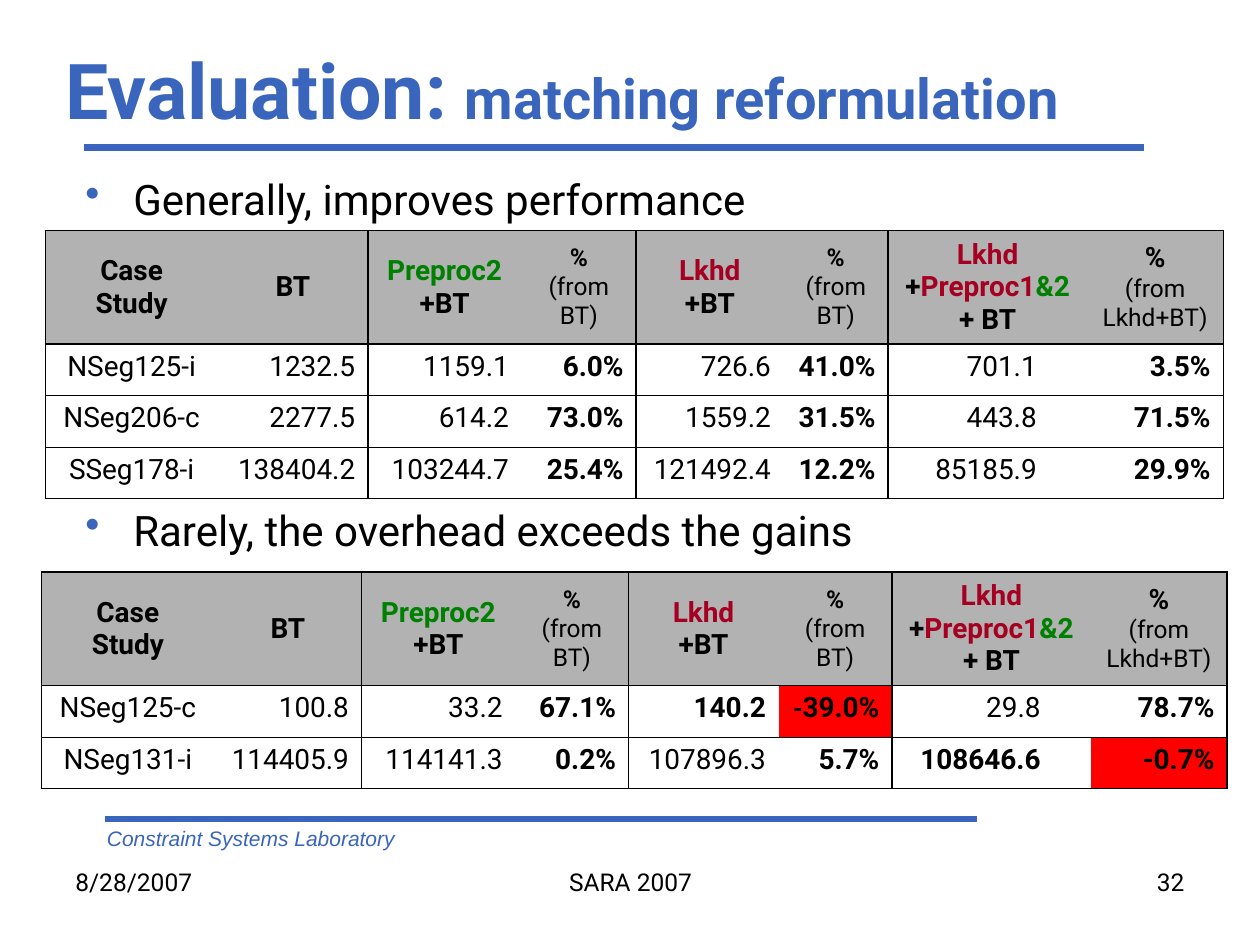
import pptx
import pptx.dml.color
import pptx.enum.text
import pptx.enum.shapes
import pptx.oxml.ns
import pptx.util
from lxml import etree

Inches = pptx.util.Inches
Pt = pptx.util.Pt
ALIGN = pptx.enum.text.PP_ALIGN
ANCHOR = pptx.enum.text.MSO_ANCHOR
qn = pptx.oxml.ns.qn

BLUE, BLACK, GREEN, CRIMSON = "3A65BC", "000000", "008000", "A50021"
GRAY, RED = "B2B2B2", "FF0000"

# Header cells: a list of lines, each a list of (text, format) spans
FROM_BT = [[("%", {"size": 14})], [("(from BT)", {"size": 14, "bold": False})]]
HEADER = [
    [[("Case", {})], [("Study", {})]],
    [[("BT", {})]],
    [[("Preproc2", {"color": GREEN})], [("+BT", {})]],
    FROM_BT,
    [[("Lkhd", {"color": CRIMSON})], [("+BT", {})]],
    FROM_BT,
    [[("Lkhd", {"color": CRIMSON})],
     [("+", {}), ("Preproc1", {"color": CRIMSON}), ("&2", {"color": GREEN})],
     [("+ BT", {})]],
    [[("%", {})], [("(from Lkhd+BT)", {"size": 14, "bold": False})]],
]
IMPROVED = [
    ["NSeg125-i", "1232.5", "1159.1", "6.0%", "726.6", "41.0%", "701.1", "3.5%"],
    ["NSeg206-c", "2277.5", "614.2", "73.0%", "1559.2", "31.5%", "443.8", "71.5%"],
    ["SSeg178-i", "138404.2", "103244.7", "25.4%", "121492.4", "12.2%", "85185.9", "29.9%"],
]
WORSENED = [
    ["NSeg125-c", "100.8", "33.2", "67.1%", "140.2", "-39.0%", "29.8", "78.7%"],
    ["NSeg131-i", "114405.9", "114141.3", "0.2%", "107896.3", "5.7%", "108646.6", "-0.7%"],
]
SLOWER_TIMES = {"140.2", "108646.6"}
GROUP_STARTS = {0, 2, 4, 6}
PADDED_COLUMN = 6


def rgb(color):
    return pptx.dml.color.RGBColor.from_string(color)


def add_span(para, text, size=16, color=BLACK, bold=False, italic=False, font="Roboto"):
    span = para.add_run()
    span.text = text
    span.font.name = font
    span.font.size = Pt(size)
    span.font.bold = bold
    span.font.italic = italic
    span.font.color.rgb = rgb(color)


def add_box(page, left, top, width, height, spans, align=ALIGN.LEFT, anchor=ANCHOR.TOP):
    box = page.shapes.add_textbox(Inches(left), Inches(top), Inches(width), Inches(height))
    box.text_frame.word_wrap = True
    box.text_frame.vertical_anchor = anchor
    para = box.text_frame.paragraphs[0]
    para.alignment = align
    for text, style in spans:
        add_span(para, text, **style)
    return box


def add_rule(page, left, right, top):
    rule = page.shapes.add_connector(
        pptx.enum.shapes.MSO_CONNECTOR.STRAIGHT,
        Inches(left), Inches(top), Inches(right), Inches(top))
    rule.line.color.rgb = rgb(BLUE)
    rule.line.width = Pt(4)
    etree.SubElement(rule.element.spPr, qn("a:effectLst"))


def add_bullet(para, text):
    properties = para._p.get_or_add_pPr()
    properties.set("marL", str(Inches(0.38)))
    properties.set("indent", str(-Inches(0.38)))
    bullet_color = etree.SubElement(properties, qn("a:buClr"))
    etree.SubElement(bullet_color, qn("a:srgbClr"), val=BLUE)
    etree.SubElement(properties, qn("a:buChar"), char="•")
    add_span(para, text, size=24)


def set_border(cell, side, width):
    """Draw one black cell edge, or hide it when width is 0."""
    line = etree.SubElement(cell._tc.get_or_add_tcPr(), qn("a:ln" + side), w=str(Pt(width)))
    if width:
        fill = etree.SubElement(line, qn("a:solidFill"))
        etree.SubElement(fill, qn("a:srgbClr"), val=BLACK)
    else:
        etree.SubElement(line, qn("a:noFill"))


def fill_cell(cell, color, opacity=None):
    if color is None:
        cell.fill.background()
        return
    cell.fill.solid()
    cell.fill.fore_color.rgb = rgb(color)
    if opacity:
        swatch = cell._tc.tcPr.find(".//" + qn("a:srgbClr"))
        etree.SubElement(swatch, qn("a:alpha"), val=str(opacity * 1000))


def write_cell(cell, lines, align, bold):
    for index, spans in enumerate(lines):
        frame = cell.text_frame
        para = frame.paragraphs[0] if index == 0 else frame.add_paragraph()
        para.alignment = align
        for text, style in spans:
            add_span(para, text, **{"bold": bold, **style})


def value_lines(value):
    if value == "-39.0%":
        return [[("-", {"size": 14}), ("39.0%", {})]]
    return [[(value, {})]]


def add_results(page, left, top, widths, records):
    heights = [0.83] + [0.41] * len(records)
    table = page.shapes.add_table(
        len(heights), len(widths), Inches(left), Inches(top),
        Inches(sum(widths)), Inches(sum(heights))).table
    for column, width in zip(table.columns, widths):
        column.width = Inches(width)
    for row, height in zip(table.rows, heights):
        row.height = Inches(height)

    last = len(widths) - 1
    for r in range(len(heights)):
        for c in range(len(widths)):
            cell = table.cell(r, c)
            outer = c in (0, last)
            set_border(cell, "L", (0.75 if outer else 1) if c in GROUP_STARTS else 0)
            set_border(cell, "R", 0.75 if c == last else 1 if c + 1 in GROUP_STARTS else 0)
            set_border(cell, "T", 0.75)
            set_border(cell, "B", 0.75)
            if r == 0:
                cell.vertical_anchor = ANCHOR.MIDDLE
                fill_cell(cell, GRAY, opacity=50)
                write_cell(cell, HEADER[c], ALIGN.CENTER, True)
                continue
            value = records[r - 1][c]
            if c == PADDED_COLUMN:
                cell.margin_right = Inches(0.4)
            fill_cell(cell, RED if value.startswith("-") else None)
            write_cell(cell, value_lines(value),
                       ALIGN.CENTER if c == 0 else ALIGN.RIGHT,
                       value.endswith("%") or value in SLOWER_TIMES)


def main():
    deck = pptx.Presentation()
    deck.slide_width, deck.slide_height = Inches(10), Inches(7.5)
    page = deck.slides.add_slide(deck.slide_layouts[6])

    # Rules and laboratory name
    add_rule(page, 0.67, 9.08, 1.17)
    add_rule(page, 0.83, 7.75, 6.5)
    add_box(page, 0.75, 6.5, 5.25, 0.3, [("Constraint Systems Laboratory", {
        "size": 12, "color": BLUE, "italic": True, "font": "Arial"})])

    # Title
    heading = {"color": BLUE, "bold": True}
    add_box(page, 0.42, 0.33, 9, 0.75, [
        ("Evaluation:", {"size": 44, **heading}),
        (" ", {"size": 40, **heading}),
        ("matching reformulation", {"size": 32, **heading})], anchor=ANCHOR.MIDDLE)

    # Findings, spaced to leave room for the first table
    findings = add_box(page, 0.58, 1.33, 8.92, 4.95, []).text_frame
    add_bullet(findings.paragraphs[0], "Generally, improves performance")
    second = findings.add_paragraph()
    second.space_before = Pt(160)
    add_bullet(second, "Rarely, the overhead exceeds the gains")

    # Result tables
    add_results(page, 0.36, 1.83, [1.37, 1.19, 1.22, 0.91, 1.17, 0.83, 1.58, 1.08], IMPROVED)
    add_results(page, 0.33, 4.54, [1.37, 1.17, 1.22, 0.9, 1.19, 0.9, 1.58, 1.08], WORSENED)

    # Footer
    for left, width, text, align in [
            (0.5, 2.33, "8/28/2007", ALIGN.LEFT),
            (3.42, 3.17, "SARA 2007", ALIGN.CENTER),
            (7.17, 2.33, "32", ALIGN.RIGHT)]:
        add_box(page, left, 6.83, width, 0.52, [(text, {"size": 14})], align)

    deck.save("out.pptx")


if __name__ == "__main__":
    main()
